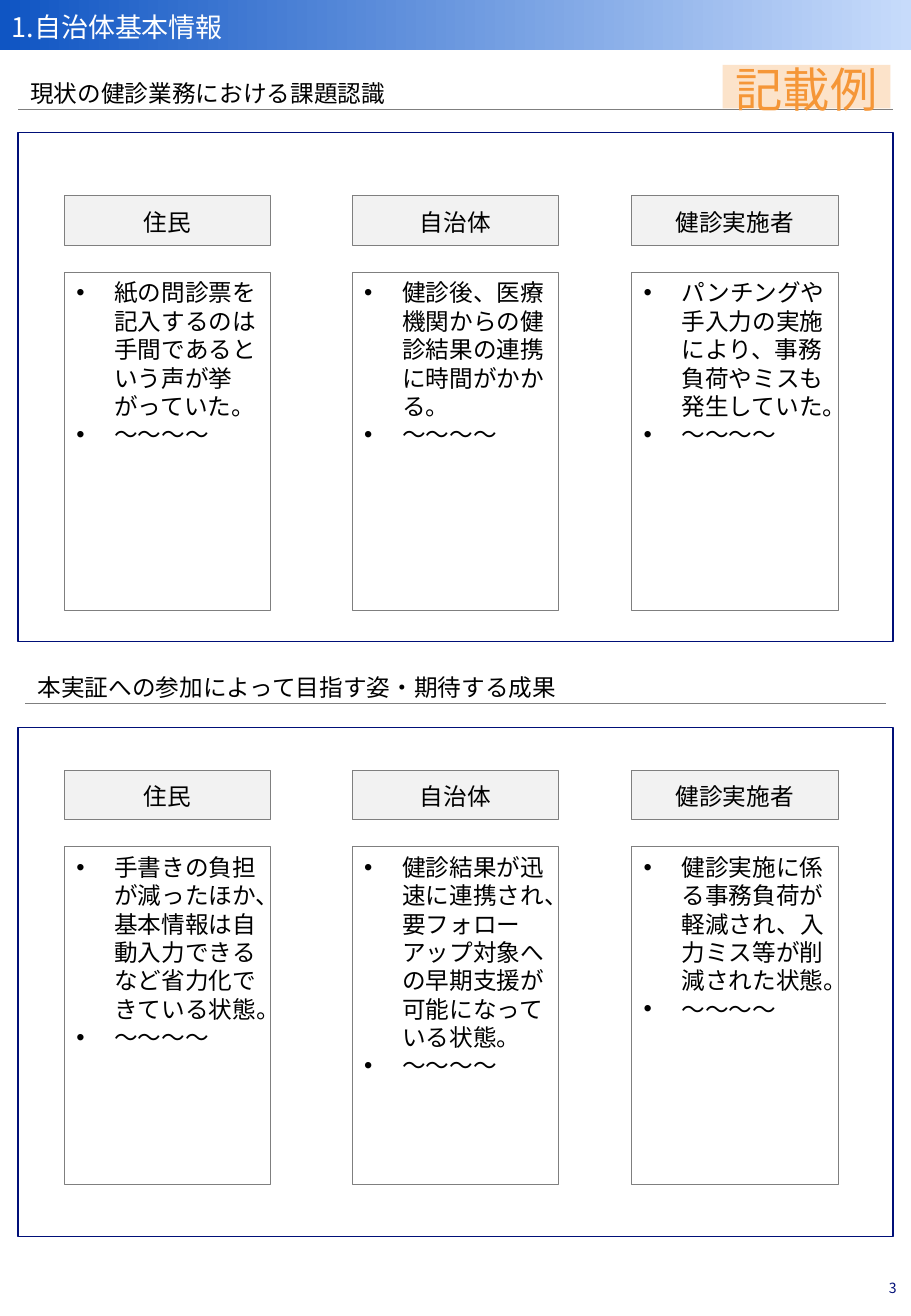
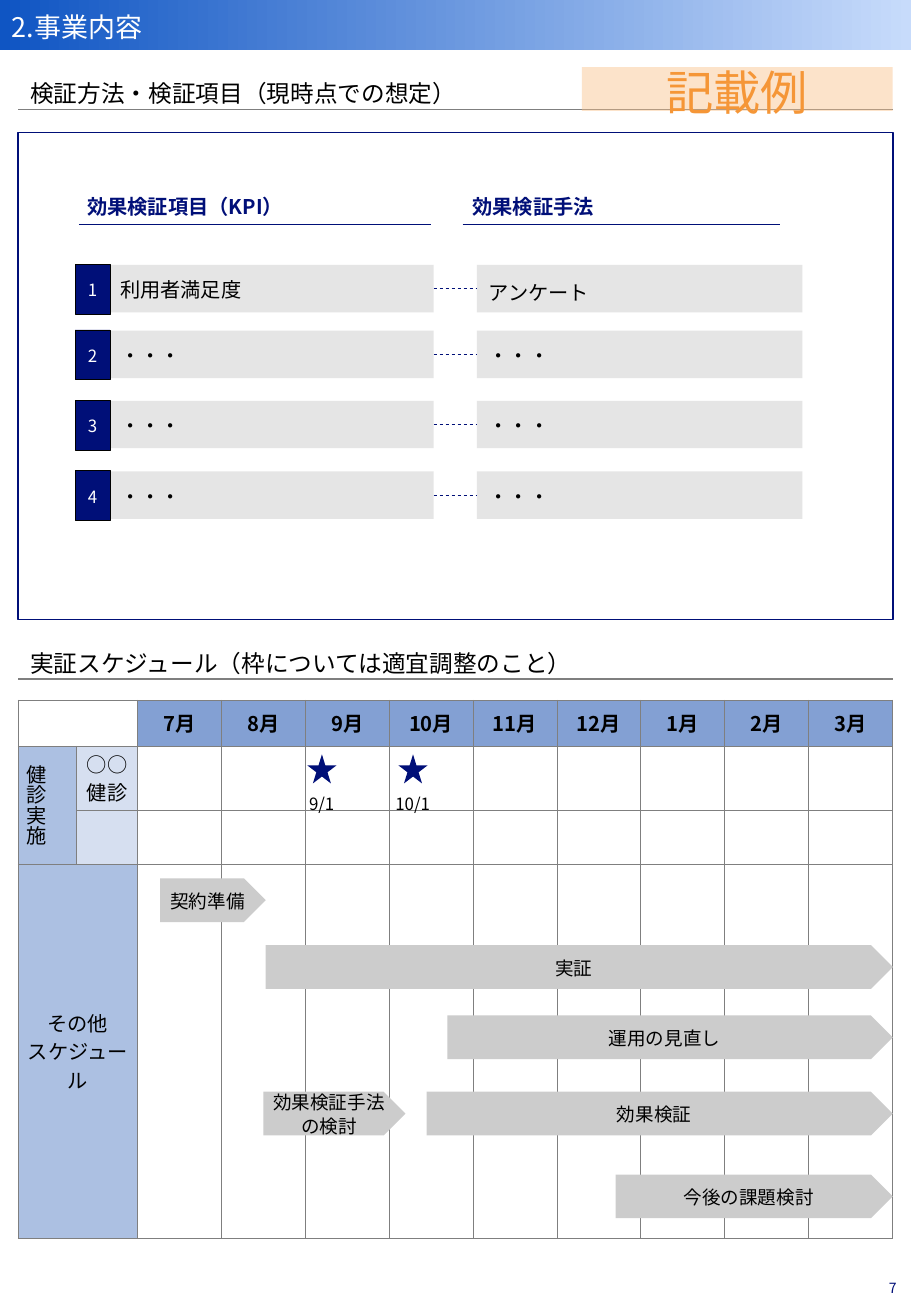
from dataclasses import dataclass

from lxml import etree
from pptx import Presentation
from pptx import util as u
from pptx.dml import color
from pptx.enum import dml, lang, shapes, text
from pptx.oxml import ns

Pt = u.Pt
KIND = shapes.MSO_SHAPE
MID = text.MSO_ANCHOR.MIDDLE
TOP = text.MSO_ANCHOR.TOP
LEFT = text.PP_ALIGN.LEFT
MIDST = text.PP_ALIGN.CENTER
RIGHT = text.PP_ALIGN.RIGHT


@dataclass(frozen=True)
class Theme:
    face: str = "Noto Sans CJK JP"
    navy: str = "000F78"
    black: str = "000000"
    white: str = "FFFFFF"
    gray: str = "7F7F7F"
    pale: str = "F2F2F2"
    bar: str = "E5E5E5"
    arrow: str = "CCCCCC"
    deep: str = "0F55C3"
    sky: str = "C7DBFB"
    peach: str = "F9C087"
    orange: str = "F59637"
    month: str = "83A0D3"
    group: str = "ACC0E2"
    item: str = "D6DFF0"
    title: float = 16
    body: float = 14
    stamp: float = 28
    label: float = 12
    step: float = 11
    small: float = 10
    page: float = 8.3
    tight: float = 1.2
    lead: float = 1.3
    loose: float = 1.4


T = Theme()


def rgb(code):
    return color.RGBColor.from_string(code)


def add(parent, tag, **attrs):
    return etree.SubElement(parent, ns.qn(tag), **attrs)


class Deck:
    def __init__(self):
        self.file = Presentation()
        self.file.slide_width, self.file.slide_height = Pt(540), Pt(780)
        self.slide = None

    def start(self, title, page):
        self.slide = self.file.slides.add_slide(self.file.slide_layouts[6])
        band = self.shape(0, 0, 540, 29.5, words=title, size=T.title,
                          ink=T.white, align=LEFT)
        band.fill.gradient()
        band.fill.gradient_angle = 180
        for stop, tint in zip(band.fill.gradient_stops, (T.sky, T.deep)):
            stop.color.rgb = rgb(tint)
        self.label(513.4, 753, 26.6, 19.4, page, T.page, ink=T.navy,
                   align=RIGHT, pad=(0, 0, 8.6, 0))

    def put(self, para, words, size, ink, bold=False, lead=T.lead,
            align=LEFT):
        para.alignment = align
        para.line_spacing = Pt(round(size * lead, 2))
        for n, line in enumerate(words.split("\n")):
            if n:
                para.add_line_break()
            run = para.add_run()
            run.text = line
            font = run.font
            font.size, font.bold, font.name = Pt(size), bold, T.face
            font.color.rgb = rgb(ink)
            font.language_id = lang.MSO_LANGUAGE_ID.JAPANESE
            add(run._r.get_or_add_rPr(), "a:ea", typeface=T.face)

    def frame(self, shape, anchor, pad):
        body = shape.text_frame
        body.word_wrap = True
        body.vertical_anchor = anchor
        (body.margin_left, body.margin_top, body.margin_right,
         body.margin_bottom) = [Pt(p) for p in pad]
        return body

    def shape(self, x, y, w, h, fill=None, edge=None, words="", size=T.body,
              ink=T.black, align=MIDST, kind=KIND.RECTANGLE, width=0.5,
              pad=(7.2, 3.6, 7.2, 3.6), lead=T.lead):
        item = self.slide.shapes.add_shape(kind, Pt(x), Pt(y), Pt(w), Pt(h))
        item.shadow.inherit = False
        if fill:
            item.fill.solid()
            item.fill.fore_color.rgb = rgb(fill)
        else:
            item.fill.background()
        if edge:
            item.line.color.rgb = rgb(edge)
            item.line.width = Pt(width)
        else:
            item.line.fill.background()
        body = self.frame(item, MID, pad)
        if words:
            self.put(body.paragraphs[0], words, size, ink, lead=lead,
                     align=align)
        return item

    def label(self, x, y, w, h, words, size, ink=T.black, bold=False,
              anchor=MID, align=LEFT, pad=(7.2, 3.6, 7.2, 3.6), lead=T.lead):
        box = self.slide.shapes.add_textbox(Pt(x), Pt(y), Pt(w), Pt(h))
        body = self.frame(box, anchor, pad)
        self.put(body.paragraphs[0], words, size, ink, bold, lead, align)

    def line(self, x, y, end, ink, width=0.5, dash=False):
        rule = self.slide.shapes.add_connector(
            shapes.MSO_CONNECTOR.STRAIGHT, Pt(x), Pt(y), Pt(end), Pt(y))
        rule.line.color.rgb = rgb(ink)
        rule.line.width = Pt(width)
        if dash:
            rule.line.dash_style = dml.MSO_LINE.DASH
        add(rule._element.spPr, "a:effectLst")

    def head(self, words, y, x=10.8):
        self.line(x, y, 540 - x, T.gray, 0.75)
        self.label(x, y - 21.6, 463, 24.5, words, T.body, anchor=TOP,
                   lead=T.tight)

    def panel(self, y, h):
        self.shape(10.8, y, 518.4, h, edge=T.navy, width=1)

    def stamp(self, x, y, w):
        tag = self.shape(x, y, w, 25.9, T.peach, words="記載例",
                         size=T.stamp, ink=T.orange, pad=(0, 0, 0, 0))
        tint = tag._element.spPr.find(".//" + ns.qn("a:srgbClr"))
        add(tint, "a:alpha", val="44000")

    def notes(self, x, y, w, h, lines):
        box = self.shape(x, y, w, h, T.white, T.gray)
        body = self.frame(box, TOP, (7.2, 3.6, 7.2, 3.6))
        for n, words in enumerate(lines):
            para = body.add_paragraph() if n else body.paragraphs[0]
            props = para._p.get_or_add_pPr()
            props.set("marL", str(Pt(22.5)))
            props.set("indent", str(-Pt(22.5)))
            props.set("hangingPunct", "1")
            add(props, "a:buFont", typeface="Arial")
            add(props, "a:buChar", char="•")
            self.put(para, words, T.body, T.black, lead=T.tight)

    def columns(self, y, texts):
        names = ("住民", "自治体", "健診実施者")
        for x, name, words in zip((38.2, 208.8, 374.4), names, texts):
            self.shape(x, y, 122.4, 29.5, T.pale, T.gray, name)
            self.notes(x, y + 45.4, 122.4, 200.2, (words, "～～～～"))

    def grid(self, x, y, cols, rows):
        item = self.slide.shapes.add_table(
            len(rows), len(cols), Pt(x), Pt(y), Pt(sum(cols)), Pt(sum(rows)))
        table = item.table
        table.first_row = table.horz_banding = False
        for col, w in zip(table.columns, cols):
            col.width = Pt(w)
        for row, h in zip(table.rows, rows):
            row.height = Pt(h)
        for cell in table.iter_cells():
            cell.margin_left = cell.margin_right = Pt(2.9)
            cell.margin_top = cell.margin_bottom = Pt(2)
            cell.vertical_anchor = MID
            props = cell._tc.get_or_add_tcPr()
            for side in "LRTB":
                edge = add(props, "a:ln" + side, w=str(Pt(0.5)))
                add(add(edge, "a:solidFill"), "a:srgbClr", val=T.gray)
            cell.fill.background()
        return table

    def cell(self, cell, fill, words="", bold=False):
        cell.fill.solid()
        cell.fill.fore_color.rgb = rgb(fill)
        if words:
            self.put(cell.text_frame.paragraphs[0], words, T.label, T.black,
                     bold, T.loose, MIDST)


def basics(deck):
    deck.start("1.自治体基本情報", "3")
    deck.head("現状の健診業務における課題認識", 64.8)
    deck.head("本実証への参加によって目指す姿・期待する成果", 416.9, 15.1)
    deck.panel(78.5, 301.7)
    deck.panel(431.3, 301.7)
    deck.columns(116, (
        "紙の問診票を記入するのは手間であるという声が挙がっていた。",
        "健診後、医療機関からの健診結果の連携に時間がかかる。",
        "パンチングや手入力の実施により、事務負荷やミスも発生していた。"))
    deck.columns(456.5, (
        "手書きの負担が減ったほか、基本情報は自動入力できるなど省力化できている状態。",
        "健診結果が迅速に連携され、要フォローアップ対象への早期支援が可能になっている状態。",
        "健診実施に係る事務負荷が軽減され、入力ミス等が削減された状態。"))
    deck.stamp(428.4, 38.4, 99.4)


def checks(deck):
    for x, start, end, words in (
            (44.6, 46.8, 255.6, "効果検証項目（KPI）"),
            (272.9, 274.3, 462.2, "効果検証手法")):
        deck.label(x, 110.4, 203, 22.3, words, T.label, T.navy, True)
        deck.line(start, 133, end, T.navy)
    more = "・・・"
    rows = ((157, "利用者満足度", "アンケート"), (196, more, more),
            (237.6, more, more), (279.4, more, more))
    for n, (y, goal, means) in enumerate(rows, 1):
        deck.shape(64.1, y, 193, 28.1, T.bar, words=goal, size=T.label,
                   align=LEFT)
        deck.shape(44.6, y - 0.4, 20.6, 29.5, T.navy, T.black, str(n),
                   T.small, T.white, pad=(0, 3.6, 0, 3.6))
        deck.shape(282.6, y, 193, 28.1, T.bar, words=means, size=T.label,
                   align=LEFT, lead=1.6 if n == 1 else T.lead)
        deck.line(257, y + 14.2, 282.6, T.navy, dash=True)


def plan(deck):
    table = deck.grid(10.8, 415, [34.7, 36] + [49.74] * 9,
                      [27.3, 38, 32.2, 221.5])
    for first, last in (((0, 0), (0, 1)), ((1, 0), (2, 0)), ((3, 0), (3, 1))):
        table.cell(*first).merge(table.cell(*last))
    for n in range(9):
        deck.cell(table.cell(0, n + 2), T.month, f"{(n + 6) % 12 + 1}月", True)
    deck.cell(table.cell(1, 0), T.group, "健診実施")
    table.cell(1, 0)._tc.get_or_add_tcPr().set("vert", "eaVert")
    deck.cell(table.cell(1, 1), T.item, "○○\n健診")
    deck.cell(table.cell(2, 1), T.item)
    deck.cell(table.cell(3, 0), T.group, "その他\nスケジュール")
    for x, y, w, words in (
            (95, 520.6, 62.6, "契約準備"),
            (157.5, 560.2, 371.7, "実証"),
            (265.2, 601.9, 264, "運用の見直し"),
            (156.2, 647.1, 84.2, "効果検証手法の検討"),
            (252.9, 647.1, 276.3, "効果検証"),
            (365, 696.2, 164.2, "今後の課題検討")):
        deck.shape(x, y, w, 25.9, T.arrow, words=words, size=T.step,
                   kind=KIND.PENTAGON, pad=(2.9, 3.6, 2.9, 3.6))
    for star, x, day in ((182.2, 183.2, "9/1"), (236.2, 234.4, "10/1")):
        deck.shape(star, 447.1, 17.3, 17.3, T.navy, kind=KIND.STAR_5_POINT)
        deck.label(x, 463.7, 30, 20.2, day, T.small, anchor=TOP,
                   pad=(0, 3.6, 0, 0), lead=1.5)


def project(deck):
    deck.start("2.事業内容", "7")
    deck.head("検証方法・検証項目（現時点での想定）", 64.8)
    deck.panel(78.5, 288.7)
    deck.head("実証スケジュール（枠については適宜調整のこと）", 402.5)
    plan(deck)
    checks(deck)
    deck.stamp(344.9, 39.8, 184.3)


def main():
    deck = Deck()
    basics(deck)
    project(deck)
    deck.file.save("out.pptx")


if __name__ == "__main__":
    main()
